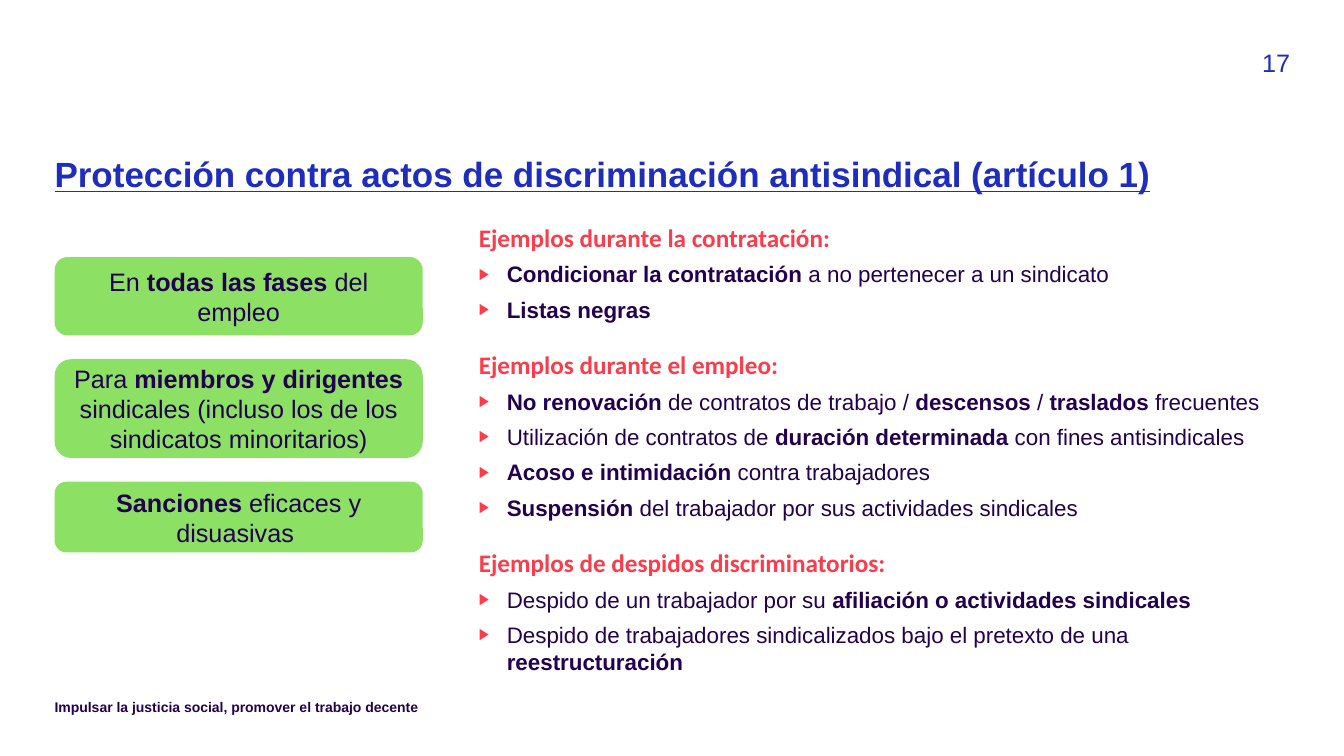
import pptx
import pptx.dml.color
import pptx.enum.shapes
import pptx.enum.text
import pptx.oxml
import pptx.oxml.ns
import pptx.util

Pt = pptx.util.Pt
ALIGN = pptx.enum.text.PP_ALIGN
ANCHOR = pptx.enum.text.MSO_ANCHOR
BLUE, PURPLE, RED, GREEN = "1E2DBE", "230050", "FA3C4B", "8CE164"

# Text between ** marks is bold.
TITLE = "Protección contra actos de discriminación antisindical (artículo 1)"
FOOTER = "**Impulsar la justicia social, promover el trabajo decente**"
NUMBER = "17"
KEY_POINTS = [  # text, box height
    ("En **todas las fases** del empleo", 56),
    ("Para **miembros y dirigentes** sindicales (incluso los de los sindicatos minoritarios)", 70.5),
    ("**Sanciones** eficaces y disuasivas ", 50.5),
]
EXAMPLES = [
    ("Ejemplos durante la contratación:", [
        "**Condicionar la contratación** a no pertenecer a un sindicato",
        "**Listas negras**",
    ]),
    ("Ejemplos durante el empleo:", [
        "**No renovación** de contratos de trabajo / **descensos** / **traslados** frecuentes",
        "Utilización de contratos de **duración determinada** con fines antisindicales",
        "**Acoso e intimidación** contra trabajadores",
        "**Suspensión** del trabajador por sus actividades sindicales",
    ]),
    ("Ejemplos de despidos discriminatorios:", [
        "Despido de un trabajador por su **afiliación o actividades sindicales**",
        "Despido de trabajadores sindicalizados bajo el pretexto de una **reestructuración**",
    ]),
]
LEFT, BOX_TOP, BOX_WIDTH, BOX_GAP = 39, 183.6, 263, 17


def rgb(color):
    return pptx.dml.color.RGBColor.from_string(color)


def write(p, text, size, color, font="Arial"):
    """Fill a paragraph, making the parts between ** marks bold."""
    for i, part in enumerate(text.split("**")):
        if part:
            r = p.add_run()
            r.text = part
            r.font.name, r.font.size = font, Pt(size)
            r.font.bold = i % 2 == 1
            r.font.color.rgb = rgb(color)


def add_bullet(p):
    pPr = p._p.get_or_add_pPr()
    pPr.set("marL", str(Pt(20)))
    pPr.set("indent", str(-Pt(20)))
    ns = pptx.oxml.ns.nsdecls("a")
    for xml in (f'<a:buClr {ns}><a:srgbClr val="{RED}"/></a:buClr>',
                f'<a:buSzPct {ns} val="70000"/>',
                f'<a:buFont {ns} typeface="Arial"/>',
                f'<a:buChar {ns} char="▶"/>'):
        pPr.append(pptx.oxml.parse_xml(xml))


def clear_margins(tf):
    tf.word_wrap = True
    tf.margin_left = tf.margin_top = tf.margin_right = tf.margin_bottom = 0


def add_text(s, left, top, width, height):
    tf = s.shapes.add_textbox(Pt(left), Pt(top), Pt(width), Pt(height)).text_frame
    clear_margins(tf)
    return tf


def add_title(s):
    sp = s.shapes.title
    sp.left, sp.top, sp.width, sp.height = Pt(LEFT), Pt(112.5), Pt(883), Pt(57)
    tf = sp.text_frame
    clear_margins(tf)
    tf.vertical_anchor = ANCHOR.TOP
    p = tf.paragraphs[0]
    p.alignment, p.line_spacing = ALIGN.LEFT, 0.9
    write(p, f"**{TITLE}**", 25, BLUE)
    p.runs[0].font.underline = True


def add_key_points(s):
    top = BOX_TOP
    for text, height in KEY_POINTS:
        sp = s.shapes.add_shape(pptx.enum.shapes.MSO_SHAPE.ROUNDED_RECTANGLE,
                                Pt(LEFT), Pt(top), Pt(BOX_WIDTH), Pt(height))
        sp.shadow.inherit = False
        sp.fill.solid()
        sp.fill.fore_color.rgb = rgb(GREEN)
        sp.line.fill.background()
        tf = sp.text_frame
        tf.word_wrap = True
        tf.vertical_anchor = ANCHOR.MIDDLE
        p = tf.paragraphs[0]
        p.alignment = ALIGN.CENTER
        write(p, text, 18, PURPLE)
        top += height + BOX_GAP


def add_examples(s):
    tf = add_text(s, 342, 158.5, 589, 266.5)
    for i, (heading, items) in enumerate(EXAMPLES):
        p = tf.add_paragraph() if i else tf.paragraphs[0]
        p.space_before = Pt(19 if i else 0)
        write(p, f"**{heading}**", 18, RED, "Calibri")
        for item in items:
            p = tf.add_paragraph()
            p.space_before = Pt(6)
            add_bullet(p)
            write(p, item, 16, PURPLE)


def main():
    prs = pptx.Presentation()
    prs.slide_width, prs.slide_height = Pt(960), Pt(540)
    s = prs.slides.add_slide(prs.slide_layouts[5])
    add_title(s)
    write(add_text(s, LEFT, 499, 441, 14.5).paragraphs[0], FOOTER, 10, PURPLE)
    p = add_text(s, 879, 34, 42.5, 22).paragraphs[0]
    p.alignment = ALIGN.RIGHT
    write(p, NUMBER, 18, BLUE)
    add_key_points(s)
    add_examples(s)
    prs.save("out.pptx")


if __name__ == "__main__":
    main()
